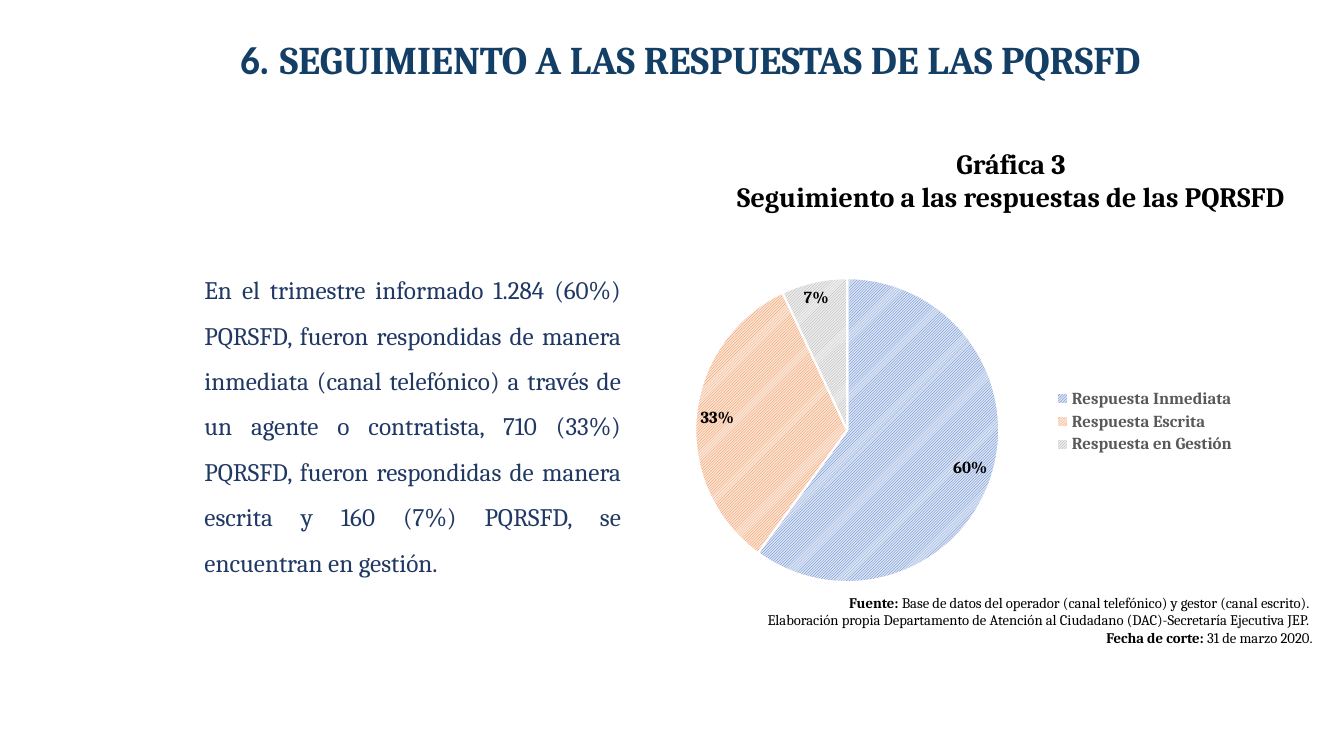
from lxml import etree
from pptx import Presentation
from pptx.chart.data import CategoryChartData
from pptx.dml.color import RGBColor
from pptx.enum.chart import XL_CHART_TYPE, XL_LABEL_POSITION, XL_LEGEND_POSITION
from pptx.enum.dml import MSO_PATTERN
from pptx.enum.shapes import MSO_SHAPE
from pptx.enum.text import MSO_ANCHOR, PP_ALIGN
from pptx.oxml.ns import qn
from pptx.util import Pt

PIE = XL_CHART_TYPE.PIE
BEST_FIT = XL_LABEL_POSITION.BEST_FIT
LEGEND_RIGHT = XL_LEGEND_POSITION.RIGHT
STRIPES = MSO_PATTERN.LIGHT_UPWARD_DIAGONAL
ROUNDED = MSO_SHAPE.ROUNDED_RECTANGLE
MIDDLE = MSO_ANCHOR.MIDDLE
CENTER, RIGHT, JUSTIFY = PP_ALIGN.CENTER, PP_ALIGN.RIGHT, PP_ALIGN.JUSTIFY

NAVY = RGBColor(0x13, 0x3E, 0x65)
INDIGO = RGBColor(0x20, 0x38, 0x64)
BLACK = RGBColor(0, 0, 0)
GRAY = RGBColor(0x59, 0x59, 0x59)
WHITE = RGBColor(0xFF, 0xFF, 0xFF)
SLICE_COLORS = [
    (RGBColor(0x44, 0x72, 0xC4), RGBColor(0xDA, 0xE3, 0xF3)),
    (RGBColor(0xED, 0x7D, 0x31), RGBColor(0xFB, 0xE5, 0xD6)),
    (RGBColor(0xA5, 0xA5, 0xA5), RGBColor(0xED, 0xED, 0xED)),
]
SERIF, SANS = "Cambria", "Calibri"

RESPONSES = {
    "Respuesta Inmediata": 0.6,
    "Respuesta Escrita": 0.33,
    "Respuesta en Gestión": 0.07,
}
SUMMARY = (
    "En el trimestre informado 1.284 (60%) PQRSFD, fueron respondidas de manera "
    "inmediata (canal telefónico) a través de un agente o contratista, 710 (33%) "
    "PQRSFD, fueron respondidas de manera escrita y 160 (7%) PQRSFD, se "
    "encuentran en gestión."
)
CAPTION = [
    [("Gráfica 3", True)],
    [("Seguimiento a las respuestas de las PQRSFD", True)],
]
SOURCE = [
    [("Fuente:", True),
     (" Base de datos del operador (canal telefónico) y gestor (canal escrito). ", False)],
    [("Elaboración propia Departamento de Atención al Ciudadano (DAC)-Secretaría Ejecutiva JEP. ", False)],
    [("Fecha de corte:", True), (" 31 de marzo 2020.", False)],
]


def style_font(font, size, color, bold=False, name=SERIF):
    font.name = name
    font.size = Pt(size)
    font.bold = bold
    font.color.rgb = color


def add_run(paragraph, text, size, color, bold=False, name=SERIF):
    run = paragraph.add_run()
    run.text = text
    style_font(run.font, size, color, bold, name)


def add_title(slide):
    title = slide.shapes.title
    title.left, title.top, title.width, title.height = Pt(66.24), Pt(10), Pt(853.2), Pt(62.64)
    title.text_frame.vertical_anchor = MIDDLE
    heading = title.text_frame.paragraphs[0]
    heading.alignment = CENTER
    heading.line_spacing = 0.9
    add_run(heading, "6", 28, NAVY, True, SANS)
    add_run(heading, ".", 28, NAVY, True)
    add_run(heading, " ", 36, NAVY, True)
    add_run(heading, "SEGUIMIENTO A LAS RESPUESTAS DE LAS PQRSFD", 28, NAVY, True)


def add_summary(slide):
    panel = slide.shapes.add_shape(ROUNDED, Pt(126), Pt(166.32), Pt(337.68), Pt(264.96))
    panel.shadow.inherit = False
    panel.fill.background()
    panel.line.fill.background()
    panel.text_frame.word_wrap = True
    panel.text_frame.vertical_anchor = MIDDLE
    summary = panel.text_frame.paragraphs[0]
    summary.alignment = JUSTIFY
    summary.line_spacing = 1.5
    add_run(summary, SUMMARY, 18, INDIGO)


def add_text(slide, left, top, width, height, lines, size, alignment):
    frame = slide.shapes.add_textbox(Pt(left), Pt(top), Pt(width), Pt(height)).text_frame
    frame.word_wrap = True
    for index, line in enumerate(lines):
        paragraph = frame.add_paragraph() if index else frame.paragraphs[0]
        paragraph.alignment = alignment
        for text, bold in line:
            add_run(paragraph, text, size, BLACK, bold)


def place_plot(chart, x, y, w, h):
    plot_area = chart.plots[0]._element.getparent()
    layout = plot_area.find(qn("c:layout"))
    if layout is None:
        layout = etree.Element(qn("c:layout"))
        plot_area.insert(0, layout)
    manual = etree.SubElement(layout, qn("c:manualLayout"))
    settings = {"layoutTarget": "inner", "xMode": "edge", "yMode": "edge",
                "x": x, "y": y, "w": w, "h": h}
    for tag, value in settings.items():
        etree.SubElement(manual, qn("c:" + tag)).set("val", str(value))


def add_response_pie(slide):
    data = CategoryChartData(number_format="0%")
    data.categories = list(RESPONSES)
    data.add_series("Respuestas", list(RESPONSES.values()))
    chart = slide.shapes.add_chart(PIE, Pt(480.24), Pt(181.44), Pt(409.68), Pt(239.76), data).chart
    style_font(chart.font, 11, BLACK)
    chart.has_title = False
    chart.has_legend = True
    chart.legend.position = LEGEND_RIGHT
    chart.legend.include_in_layout = False
    style_font(chart.legend.font, 12, GRAY, True)
    place_plot(chart, 0.04, 0.07, 0.53, 0.91)

    pie = chart.plots[0]
    pie.vary_by_categories = True
    pie.has_data_labels = True
    labels = pie.data_labels
    labels.show_value = True
    labels.show_percentage = False
    labels.number_format = "0%"
    labels.number_format_is_linked = False
    labels.position = BEST_FIT
    style_font(labels.font, 12, BLACK, True)

    for index, (stripe, base) in enumerate(SLICE_COLORS):
        slice_format = pie.series[0].points[index].format
        slice_format.fill.patterned()
        slice_format.fill.pattern = STRIPES
        slice_format.fill.fore_color.rgb = stripe
        slice_format.fill.back_color.rgb = base
        slice_format.line.color.rgb = WHITE
        slice_format.line.width = Pt(1.5)


def main():
    deck = Presentation()
    deck.slide_width, deck.slide_height = Pt(960), Pt(540)
    slide = deck.slides.add_slide(deck.slide_layouts[5])
    add_title(slide)
    add_summary(slide)
    add_text(slide, 492.48, 100.8, 459.36, 55.44, CAPTION, 20, CENTER)
    add_text(slide, 499.68, 420.48, 444.96, 45.36, SOURCE, 10.5, RIGHT)
    add_response_pie(slide)
    deck.save("out.pptx")


if __name__ == "__main__":
    main()
